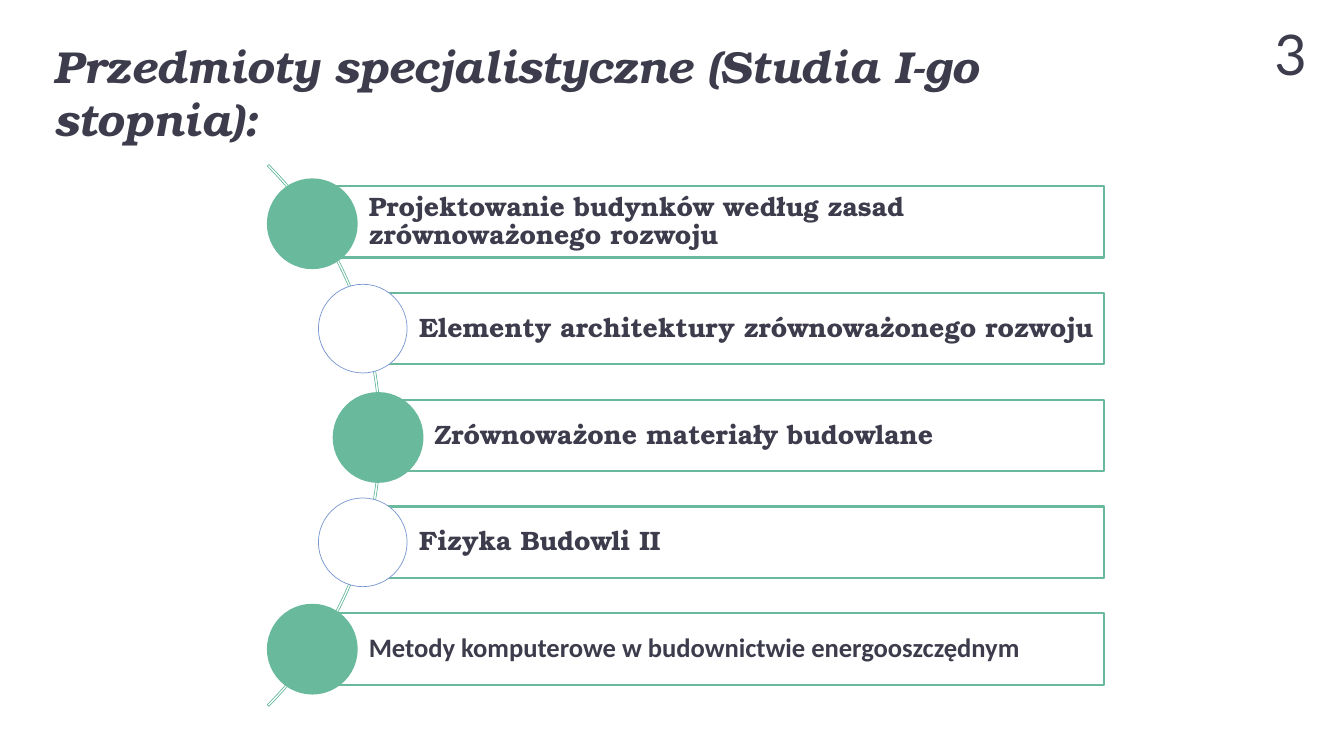
import math
from dataclasses import dataclass

import pptx
import pptx.util
import pptx.dml.color
import pptx.enum.shapes
import pptx.enum.text

Inches = pptx.util.Inches
Pt = pptx.util.Pt
RGB = pptx.dml.color.RGBColor.from_string
SHAPE = pptx.enum.shapes.MSO_SHAPE
ALIGN = pptx.enum.text.PP_ALIGN
ANCHOR = pptx.enum.text.MSO_ANCHOR


@dataclass(frozen=True)
class Theme:
    ink: str = "3C3C4C"
    green: str = "69BA9C"
    blue: str = "7896CF"
    white: str = "FFFFFF"
    serif: str = "TeX Gyre Bonum"
    sans: str = "Calibri"
    digit: str = "Lato"
    head: int = 32
    body: int = 19
    page: int = 40
    thick: float = 1.5
    thin: float = 0.5


THEME = Theme()

ROWS = [
    ("Projektowanie budynków według zasad zrównoważonego rozwoju", THEME.serif, 0.02),
    ("Elementy architektury zrównoważonego rozwoju", THEME.serif, 0),
    ("Zrównoważone materiały budowlane", THEME.serif, 0.02),
    ("Fizyka Budowli II", THEME.serif, 0),
    ("Metody komputerowe w budownictwie energooszczędnym", THEME.sans, 0),
]


def write(shape, text, size, font=THEME.serif, bold=False, italic=False,
          align=ALIGN.LEFT, anchor=ANCHOR.MIDDLE, space=None,
          inset=(0.1, 0.05, 0.1, 0.05)):
    frame = shape.text_frame
    frame.word_wrap = True
    frame.auto_size = pptx.enum.text.MSO_AUTO_SIZE.NONE
    frame.vertical_anchor = anchor
    (frame.margin_left, frame.margin_top,
     frame.margin_right, frame.margin_bottom) = map(Inches, inset)
    para = frame.paragraphs[0]
    para.alignment = align
    if space:
        para.line_spacing = space
    run = para.add_run()
    run.text = text
    run.font.name = font
    run.font.size = Pt(size)
    run.font.bold = bold
    run.font.italic = italic
    run.font.color.rgb = RGB(THEME.ink)


def draw(shapes, kind, box, line, width, fill=None):
    shape = shapes.add_shape(kind, *map(Inches, box))
    shape.shadow.inherit = False
    if fill:
        shape.fill.solid()
        shape.fill.fore_color.rgb = RGB(fill)
    else:
        shape.fill.background()
    shape.line.color.rgb = RGB(line)
    shape.line.width = Pt(width)
    return shape


def add_title(slide, box, text):
    title = slide.shapes.title
    title.left, title.top, title.width, title.height = map(Inches, box)
    write(title, text, THEME.head, bold=True, italic=True, anchor=ANCHOR.TOP)


def add_page(slide, box, text):
    page = slide.shapes.add_textbox(*map(Inches, box))
    write(page, text, THEME.page, font=THEME.digit, align=ALIGN.RIGHT)


def add_list(slide, box, rows):
    left, top, width, height = box
    group = slide.shapes.add_group_shape().shapes
    ring, orbit, pitch, bar, dot = 7.6, 3.77, 1.06, 0.71, 0.88
    hub, mid = left - 2.67, top + height / 2
    arc = draw(group, SHAPE.BLOCK_ARC,
               (hub - ring / 2, mid - ring / 2, ring, ring),
               THEME.green, THEME.thin)
    for index, value in enumerate((189, 27, 0.003)):
        arc.adjustments[index] = value
    for index, (text, font, drop) in enumerate(rows):
        rise = (index - (len(rows) - 1) / 2) * pitch
        x = hub + math.sqrt(orbit ** 2 - rise ** 2)
        y = mid + rise
        label = draw(group, SHAPE.RECTANGLE,
                     (x, y - bar / 2, left + width - x, bar),
                     THEME.green, THEME.thick)
        write(label, text, THEME.body, font=font, bold=True, space=0.9,
              inset=(0.56, 0.05, 0.05, 0.05))
        if index % 2:
            style = THEME.blue, THEME.thin, THEME.white
        else:
            style = THEME.green, THEME.thick, THEME.green
        draw(group, SHAPE.OVAL,
             (x - dot / 2, y + drop - dot / 2, dot, dot), *style)


def main():
    deck = pptx.Presentation()
    deck.slide_width = Inches(13.33)
    deck.slide_height = Inches(7.5)
    slide = deck.slides.add_slide(deck.slide_layouts[5])
    add_page(slide, (10.06, 0.33, 3, 0.4), "3")
    add_list(slide, (2.65, 1.62, 8.3, 5.4), ROWS)
    add_title(slide, (0.44, 0.33, 11.49, 1.17),
              "Przedmioty specjalistyczne (Studia I-go stopnia):")
    deck.save("out.pptx")


if __name__ == "__main__":
    main()
